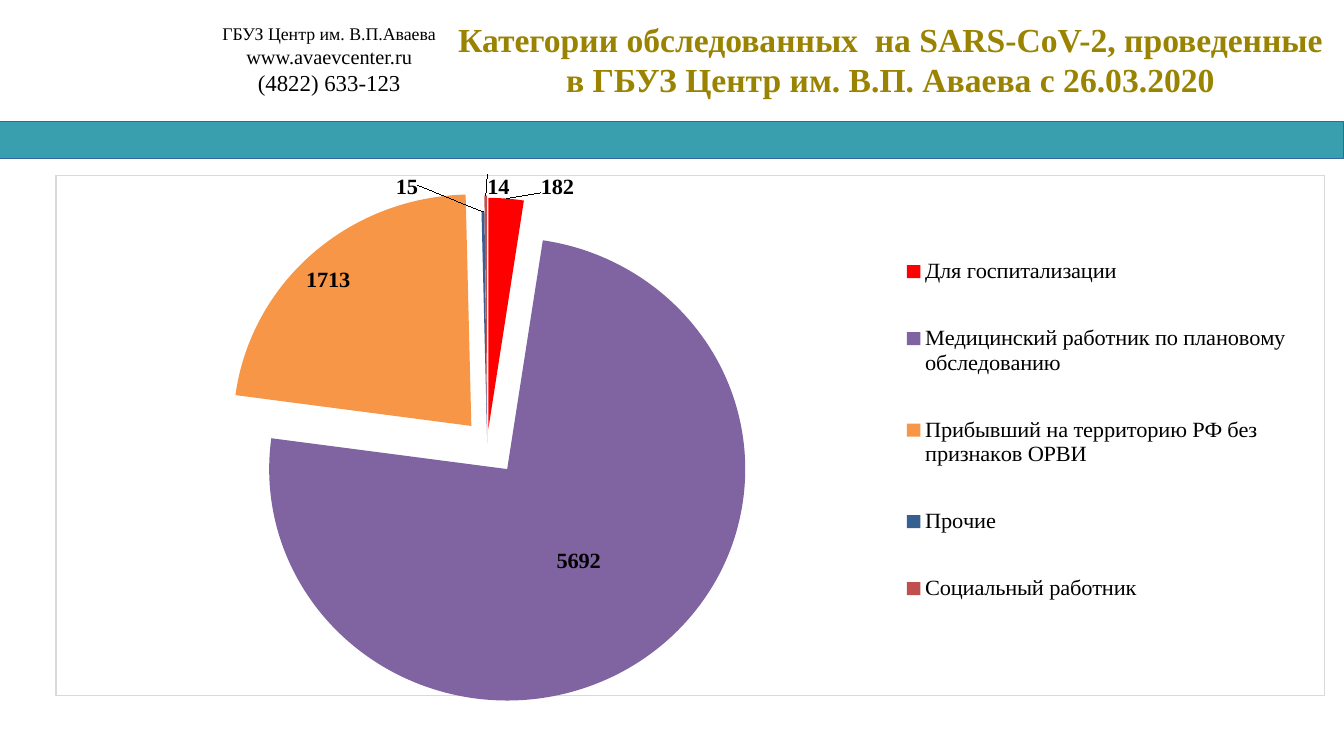
from lxml.etree import SubElement
from pptx import Presentation
from pptx.chart.data import CategoryChartData
from pptx.dml.color import RGBColor
from pptx.enum.chart import XL_CHART_TYPE, XL_LABEL_POSITION, XL_LEGEND_POSITION
from pptx.enum.shapes import MSO_SHAPE
from pptx.enum.text import MSO_ANCHOR, MSO_AUTO_SIZE, PP_ALIGN
from pptx.oxml import parse_xml
from pptx.oxml.ns import nsdecls, qn
from pptx.util import Inches, Pt

COLORS = {
    "text": "000000", "title": "998300", "band": "399FAE", "band_line": "3465A4",
    "paper": "FFFFFF", "frame": "D9D9D9", "red": "FF0000", "purple": "8064A2",
    "orange": "F79646", "blue": "376092", "brick": "C0504D",
}
FONT = "Times New Roman"

# category, value, colour, explosion in percent
CATEGORIES = [
    ("Для госпитализации", 182, "red", 6),
    ("Медицинский работник по плановому обследованию", 5692, "purple", 14),
    ("Прибывший на территорию РФ без признаков ОРВИ", 1713, "orange", 10),
    ("Прочие", 15, "blue", 0),
    ("Социальный работник", 14, "brick", 7),
]
# label shifts as shares of the chart, by point number
LABEL_SHIFTS = {0: (0.04, 0), 3: (-0.06, -0.04), 4: (0.01, -0.03)}


def color(name):
    return RGBColor.from_string(COLORS[name])


def layout_xml(**values):
    """A manual chart layout from shares of the chart's size."""
    layout = parse_xml(f"<c:layout {nsdecls('c')}/>")
    manual = SubElement(layout, qn("c:manualLayout"))
    for tag, value in values.items():
        SubElement(manual, qn(f"c:{tag}")).set("val", str(value))
    return layout


class SlideBuilder:
    def __init__(self, deck):
        self.width, self.height = deck.slide_width, deck.slide_height
        self.page = deck.slides.add_slide(deck.slide_layouts[5])

    def place(self, left, top, width, height):
        """Turn percentages of the slide into lengths."""
        return (int(self.width * left / 100), int(self.height * top / 100),
                int(self.width * width / 100), int(self.height * height / 100))

    def style(self, font, size, name="text", bold=False):
        font.name, font.size, font.bold = FONT, Pt(size), bold
        font.color.rgb = color(name)

    def band(self, *area):
        band = self.page.shapes.add_shape(MSO_SHAPE.RECTANGLE, *self.place(*area))
        band.shadow.inherit = False
        band.fill.solid()
        band.fill.fore_color.rgb = color("band")
        band.line.color.rgb = color("band_line")
        band.line.width = Pt(0.75)

    def contacts(self, lines, *area):
        box = self.page.shapes.add_textbox(*self.place(*area))
        frame = box.text_frame
        frame.word_wrap = True
        frame.margin_top = frame.margin_bottom = Inches(0.04)
        frame.text = "\n".join(text for text, size in lines)
        for para, (text, size) in zip(frame.paragraphs, lines):
            para.alignment = PP_ALIGN.CENTER
            self.style(para.runs[0].font, size)

    def title(self, text, *area):
        title = self.page.shapes.title
        title.left, title.top, title.width, title.height = self.place(*area)
        frame = title.text_frame
        frame.text = text
        frame.word_wrap = True
        frame.auto_size = MSO_AUTO_SIZE.NONE
        frame.vertical_anchor = MSO_ANCHOR.MIDDLE
        para = frame.paragraphs[0]
        para.alignment = PP_ALIGN.CENTER
        self.style(para.runs[0].font, 24, "title", True)

    def pie(self, *area):
        data = CategoryChartData()
        data.categories = [row[0] for row in CATEGORIES]
        data.add_series("Series 1", [row[1] for row in CATEGORIES])
        chart = self.page.shapes.add_chart(
            XL_CHART_TYPE.PIE, *self.place(*area), data).chart
        chart.has_title = False
        self.style(chart.font, 10)
        plot = chart.plots[0]
        plot.vary_by_categories = True
        series = plot.series[0]
        self.slices(series)
        self.labels(series)
        self.legend(chart)
        self.chart_frame(chart)

    def slices(self, series):
        for number, (_, _, name, explosion) in enumerate(CATEGORIES):
            point = series.points[number]
            point.format.fill.solid()
            point.format.fill.fore_color.rgb = color(name)
            point.format.line.fill.background()
        for point, row in zip(series._element.findall(qn("c:dPt")), CATEGORIES):
            point.find(qn("c:spPr")).addprevious(
                parse_xml(f'<c:explosion {nsdecls("c")} val="{row[3]}"/>'))

    def labels(self, series):
        labels = series.data_labels
        labels.show_value = True
        labels.position = XL_LABEL_POSITION.BEST_FIT
        self.style(labels.font, 16, bold=True)
        largest = series.points[1].data_label
        self.style(largest.font, 16, bold=True)
        largest.position = XL_LABEL_POSITION.CENTER
        for number in LABEL_SHIFTS:
            label = series.points[number].data_label
            self.style(label.font, 16, bold=True)
            label.position = XL_LABEL_POSITION.BEST_FIT
        for label in series._element.iter(qn("c:dLbl")):
            index = label.find(qn("c:idx"))
            shift = LABEL_SHIFTS.get(int(index.get("val")))
            if shift:
                index.addnext(layout_xml(x=shift[0], y=shift[1]))

    def legend(self, chart):
        chart.has_legend = True
        legend = chart.legend
        legend.position = XL_LEGEND_POSITION.RIGHT
        legend.include_in_layout = False
        self.style(legend.font, 16)
        element = legend._element
        for old in element.findall(qn("c:layout")):
            element.remove(old)
        element.find(qn("c:legendPos")).addnext(layout_xml(
            xMode="edge", yMode="edge", x=0.65, y=0.08, w=0.34, h=0.82))

    def chart_frame(self, chart):
        root = chart._chartSpace
        area = root.find(qn("c:chart")).find(qn("c:plotArea"))
        for old in area.findall(qn("c:layout")):
            area.remove(old)
        area.insert(0, layout_xml(layoutTarget="inner", xMode="edge", yMode="edge",
                                  x=0.15, y=0.07, w=0.38, h=0.89))
        root.find(qn("c:chart")).addnext(parse_xml(
            f'<c:spPr {nsdecls("c", "a")}>'
            f'<a:solidFill><a:srgbClr val="{COLORS["paper"]}"/></a:solidFill>'
            f'<a:ln w="{Pt(0.75)}"><a:solidFill><a:srgbClr val="{COLORS["frame"]}"/>'
            '</a:solidFill></a:ln></c:spPr>'))


def main():
    deck = Presentation()
    deck.slide_width, deck.slide_height = Inches(13.33), Inches(7.5)
    slide = SlideBuilder(deck)

    # Header
    slide.band(0, 16.13, 100, 4.8)
    slide.contacts([("ГБУЗ Центр им. В.П.Аваева", 12.7),
                    ("www.avaevcenter.ru", 14.5),
                    ("(4822) 633-123", 16.3)], 12.98, 2.53, 23.03, 10.93)
    slide.title("Категории обследованных  на SARS-CoV-2, проведенные "
                "в ГБУЗ Центр им. В.П. Аваева с 26.03.2020", 32.5, 1.73, 67.5, 12.13)

    # Examined people by category
    slide.pie(4.13, 21.87, 94.45, 70.8)

    deck.save("out.pptx")


if __name__ == "__main__":
    main()
